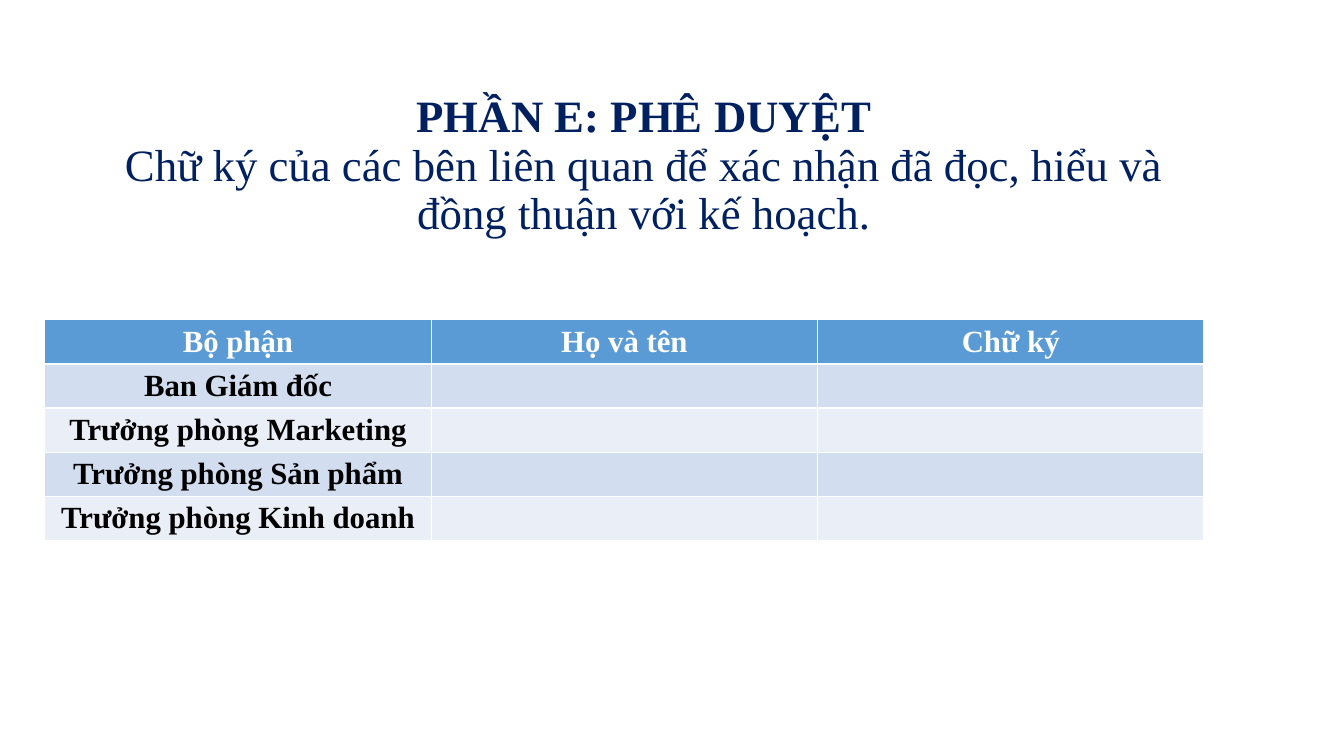
"""Build the approval slide: a centred title above a signature table."""
from dataclasses import dataclass

from pptx import Presentation
from pptx.dml.color import RGBColor as Color
from pptx.enum.text import MSO_ANCHOR as Anchor, MSO_AUTO_SIZE as AutoSize, PP_ALIGN as Align
from pptx.util import Pt


@dataclass(frozen=True)
class Theme:
    font: str = "Times New Roman"
    title_size: int = 32
    table_size: int = 22
    navy: str = "002060"
    white: str = "FFFFFF"
    black: str = "000000"
    header_fill: str = "5B9BD5"
    band_fills: tuple = ("EAEFF7", "D2DEEF")


def add_text(paragraph, text, size, color, bold):
    run = paragraph.add_run()
    run.text = text
    formats = {"name": theme.font, "size": Pt(size), "bold": bold}
    for name, value in formats.items():
        setattr(run.font, name, value)
    run.font.color.rgb = Color.from_string(color)


theme = Theme()
presentation = Presentation()
presentation.slide_width, presentation.slide_height = Pt(960), Pt(540)
slide = presentation.slides.add_slide(presentation.slide_layouts[5])

title = slide.shapes.title
title_box = {"left": 46, "top": 67, "width": 828, "height": 104.4}
for name, value in title_box.items():
    setattr(title, name, Pt(value))
frame_formats = {"word_wrap": True, "auto_size": AutoSize.NONE, "vertical_anchor": Anchor.MIDDLE}
for name, value in frame_formats.items():
    setattr(title.text_frame, name, value)
paragraph = title.text_frame.paragraphs[0]
paragraph.alignment = Align.CENTER
paragraph.line_spacing = 0.9
add_text(paragraph, "PHẦN E: PHÊ DUYỆT", theme.title_size, theme.navy, True)
paragraph.add_line_break()
add_text(
    paragraph,
    "Chữ ký của các bên liên quan để xác nhận đã đọc, hiểu và đồng thuận với kế hoạch.",
    theme.title_size, theme.navy, False,
)

headers = ["Bộ phận", "Họ và tên", "Chữ ký"]
departments = [
    "Ban Giám đốc",
    "Trưởng phòng Marketing",
    "Trưởng phòng Sản phẩm",
    "Trưởng phòng Kinh doanh",
]
rows = [headers] + [[department, "", ""] for department in departments]
row_height = 31.5
table = slide.shapes.add_table(
    len(rows), len(headers), Pt(32), Pt(228.5), Pt(828), Pt(row_height * len(rows))
).table

cell_formats = {"vertical_anchor": Anchor.MIDDLE, "margin_top": Pt(3), "margin_bottom": Pt(3)}
for row_index, row in enumerate(rows):
    is_header = row_index == 0
    fill = theme.header_fill if is_header else theme.band_fills[row_index % 2]
    color = theme.white if is_header else theme.black
    for column_index, text in enumerate(row):
        cell = table.cell(row_index, column_index)
        for name, value in cell_formats.items():
            setattr(cell, name, value)
        cell.fill.solid()
        cell.fill.fore_color.rgb = Color.from_string(fill)
        if text:
            paragraph = cell.text_frame.paragraphs[0]
            paragraph.alignment = Align.CENTER
            add_text(paragraph, text, theme.table_size, color, True)

presentation.save("out.pptx")
